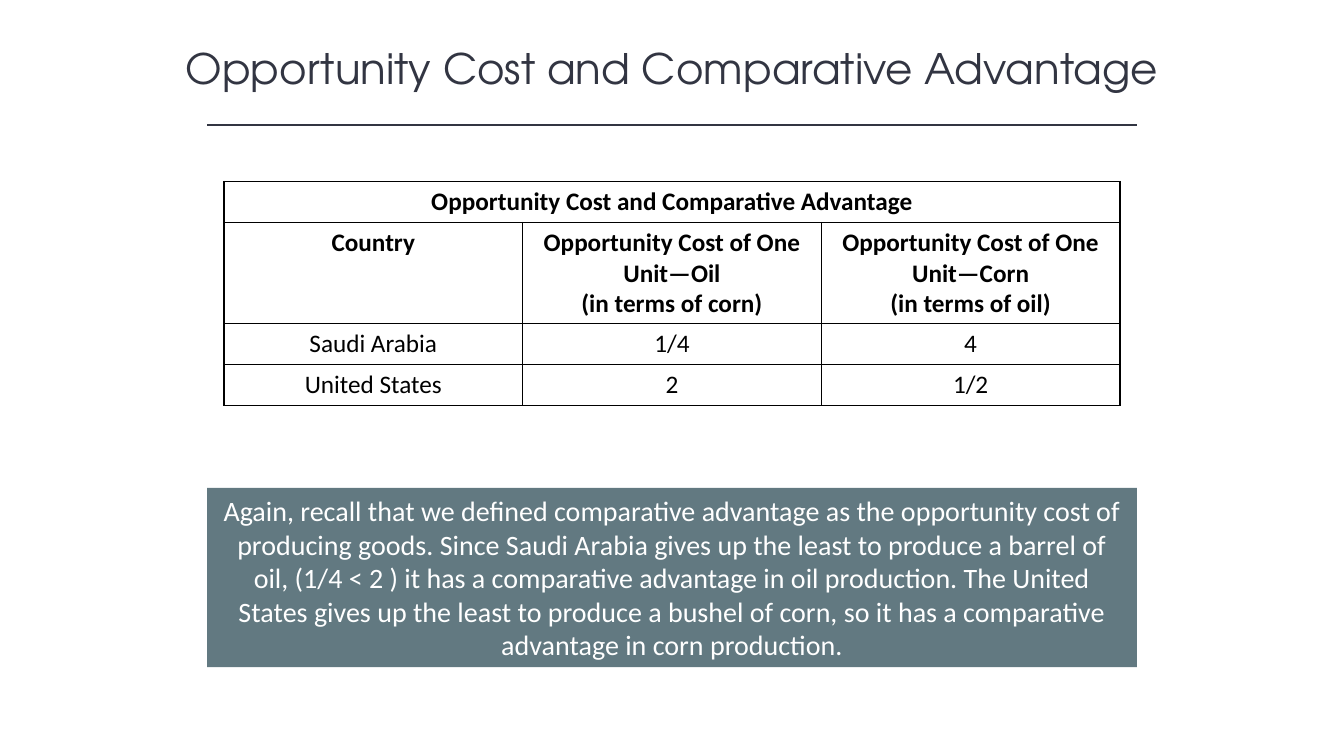
from lxml.etree import SubElement
from pptx import Presentation
from pptx.dml.color import RGBColor
from pptx.enum.shapes import MSO_CONNECTOR, MSO_SHAPE
from pptx.enum.text import MSO_ANCHOR, PP_ALIGN
from pptx.oxml import parse_xml
from pptx.oxml.ns import nsdecls, qn
from pptx.util import Inches, Pt

INK, SLATE, BLACK, WHITE = "323542", "627981", "000000", "FFFFFF"
TITLE = "Opportunity Cost and Comparative Advantage"
COST_ROWS = [
    [TITLE, "", ""],
    ["Country",
     "Opportunity Cost of One Unit—Oil\n(in terms of corn)",
     "Opportunity Cost of One Unit—Corn\n(in terms of oil)"],
    ["Saudi Arabia", "1/4", "4"],
    ["United States", "2", "1/2"],
]
HEADING_ROWS = 2
EXPLANATION = (
    "Again, recall that we defined comparative advantage as the opportunity cost of "
    "producing goods. Since Saudi Arabia gives up the least to produce a barrel of oil, "
    "(1/4 < 2 ) it has a comparative advantage in oil production. The United States gives "
    "up the least to produce a bushel of corn, so it has a comparative advantage in corn "
    "production."
)


def color(hex_string):
    return RGBColor.from_string(hex_string)


class CenteredSlide:
    """Places elements on the slide's centre line; lengths are percent of the slide."""

    title_font = {"name": "TeX Gyre Adventor", "size": Pt(30)}
    table_font = {"name": "Calibri", "size": Pt(18)}
    body_font = {"name": "Calibri", "size": Pt(20)}

    def __init__(self, presentation):
        self.slide_width = presentation.slide_width
        self.slide_height = presentation.slide_height
        self.slide = presentation.slides.add_slide(presentation.slide_layouts[6])

    def across(self, percent):
        return round(self.slide_width * percent / 100)

    def down(self, percent):
        return round(self.slide_height * percent / 100)

    def box(self, top, width, height):
        left = self.across((100 - width) / 2)
        return left, self.down(top), self.across(width), self.down(height)

    def fill_text(self, text_frame, text, text_color, font_format):
        text_frame.word_wrap = True
        text_frame.text = text
        for paragraph in text_frame.paragraphs:
            paragraph.alignment = PP_ALIGN.CENTER
            for run in paragraph.runs:
                for attribute, value in font_format.items():
                    setattr(run.font, attribute, value)
                run.font.color.rgb = color(text_color)

    def title(self, text, top, width, height):
        shape = self.slide.shapes.add_textbox(*self.box(top, width, height))
        shape.text_frame.vertical_anchor = MSO_ANCHOR.MIDDLE
        self.fill_text(shape.text_frame, text, INK, self.title_font)

    def rule(self, top, width):
        left, y, length, _ = self.box(top, width, 0)
        connector = self.slide.shapes.add_connector(
            MSO_CONNECTOR.STRAIGHT, left, y, left + length, y)
        connector.line.color.rgb = color(INK)
        connector.line.width = Pt(1)
        SubElement(connector._element.spPr, qn("a:effectLst"))

    def panel(self, text, top, width, height):
        shape = self.slide.shapes.add_shape(
            MSO_SHAPE.RECTANGLE, *self.box(top, width, height))
        shape.shadow.inherit = False
        shape.fill.solid()
        shape.fill.fore_color.rgb = color(SLATE)
        shape.line.fill.background()
        shape.text_frame.vertical_anchor = MSO_ANCHOR.MIDDLE
        self.fill_text(shape.text_frame, text, WHITE, self.body_font)

    def border(self, cell):
        properties = cell._tc.get_or_add_tcPr()
        for position, side in enumerate(("lnL", "lnR", "lnT", "lnB")):
            properties.insert(position, parse_xml(
                f'<a:{side} {nsdecls("a")} w="{Pt(1)}"><a:solidFill>'
                f'<a:srgbClr val="{BLACK}"/></a:solidFill></a:{side}>'))

    def table(self, rows, top, width, row_heights):
        frame = self.slide.shapes.add_table(
            len(rows), len(rows[0]), *self.box(top, width, sum(row_heights)))
        table = frame.table
        table.first_row = table.horz_banding = False
        for row, height in zip(table.rows, row_heights):
            row.height = self.down(height)
        for row_index, texts in enumerate(rows):
            font_format = {**self.table_font, "bold": row_index < HEADING_ROWS}
            for column_index, text in enumerate(texts):
                cell = table.cell(row_index, column_index)
                cell.fill.background()
                self.border(cell)
                self.fill_text(cell.text_frame, text, BLACK, font_format)
        # The heading spans every column
        table.cell(0, 0).merge(table.cell(0, len(rows[0]) - 1))


def main():
    presentation = Presentation()
    presentation.slide_width = Inches(13.33)
    presentation.slide_height = Inches(7.5)
    page = CenteredSlide(presentation)

    # Title and the rule beneath it
    page.title(TITLE, top=4.93, width=75, height=8.13)
    page.rule(top=16.53, width=69.17)

    # Opportunity cost by country
    page.table(COST_ROWS, top=24, width=66.67, row_heights=[5.42, 13.4, 5.42, 5.42])

    # Explanation
    page.panel(EXPLANATION, top=64.53, width=69.17, height=23.73)

    presentation.save("out.pptx")


if __name__ == "__main__":
    main()
